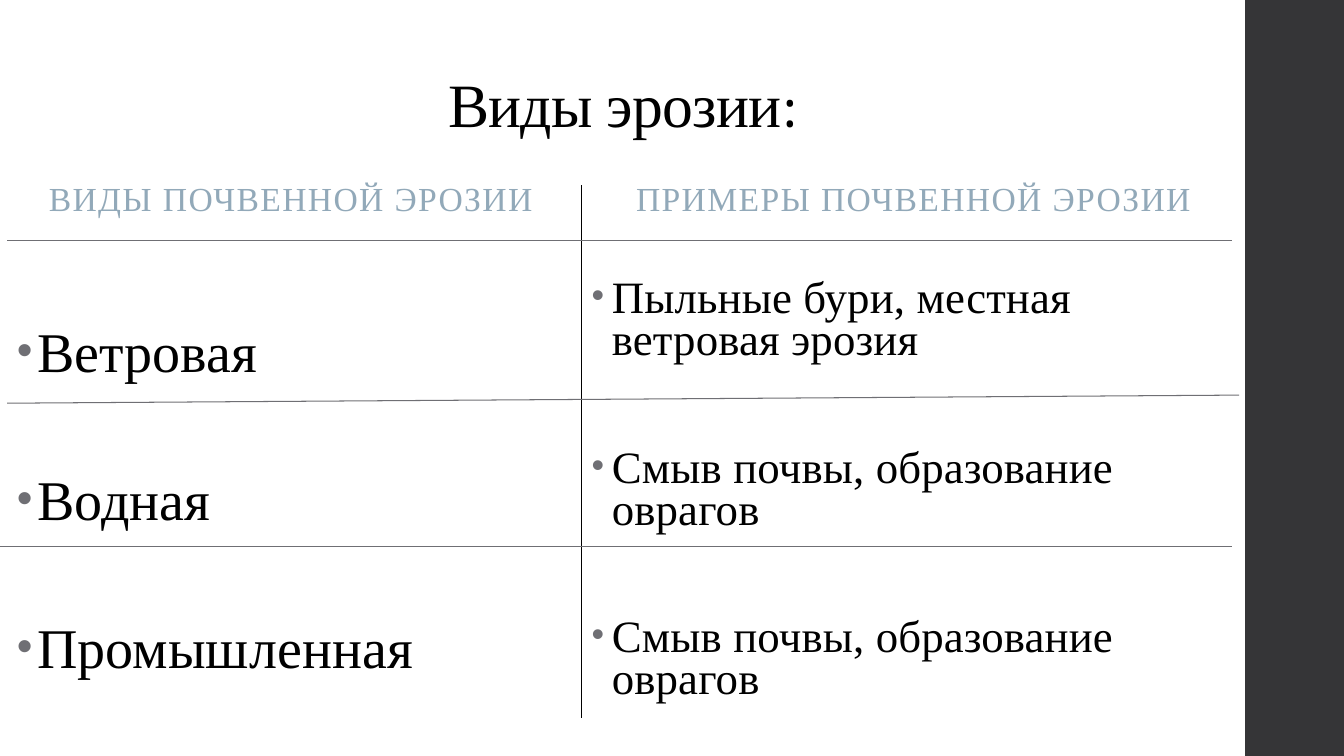
from lxml import etree
from pptx import Presentation
from pptx.dml.color import RGBColor
from pptx.enum.shapes import MSO_CONNECTOR, MSO_SHAPE
from pptx.enum.text import MSO_ANCHOR, PP_ALIGN
from pptx.oxml.ns import qn
from pptx.util import Inches, Pt

STRAIGHT = MSO_CONNECTOR.STRAIGHT
RECTANGLE = MSO_SHAPE.RECTANGLE
TOP, BOTTOM = MSO_ANCHOR.TOP, MSO_ANCHOR.BOTTOM
CENTER = PP_ALIGN.CENTER

BLACK, GRAY, BLUE, DARK = "000000", "6F6F74", "92A9B9", "353537"
SERIF, TITLE_SERIF = "Times New Roman", "Cambria"


def color(value):
    return RGBColor.from_string(value)


class ComparisonSlide:
    """Holds the current slide and the style of its elements."""

    def __init__(self, presentation):
        self.slide = presentation.slides.add_slide(presentation.slide_layouts[6])

    def band(self, left, top, width, height, fill):
        band = self.slide.shapes.add_shape(
            RECTANGLE, Inches(left), Inches(top), Inches(width), Inches(height))
        band.shadow.inherit = False
        band.fill.solid()
        band.fill.fore_color.rgb = color(fill)
        band.line.fill.background()

    def frame(self, left, top, width, height, anchor):
        box = self.slide.shapes.add_textbox(
            Inches(left), Inches(top), Inches(width), Inches(height))
        frame = box.text_frame
        frame.word_wrap = True
        frame.vertical_anchor = anchor
        return frame

    def run(self, paragraph, text, size, fill, spacing, font=SERIF):
        """Add a run; spacing between letters is in points."""
        run = paragraph.add_run()
        run.text = text
        run.font.size = Pt(size)
        run.font.name = font
        run.font.color.rgb = color(fill)
        run._r.get_or_add_rPr().set("spc", str(int(spacing * 100)))

    def heading(self, left, top, width, height, line_spacing, runs):
        paragraph = self.frame(left, top, width, height, BOTTOM).paragraphs[0]
        paragraph.alignment = CENTER
        paragraph.line_spacing = line_spacing
        for run in runs:
            self.run(paragraph, *run)

    def bullets(self, left, top, width, height, items, size, gap, inset=0.05):
        frame = self.frame(left, top, width, height, TOP)
        frame.margin_top = Inches(inset)
        for index, item in enumerate(items):
            paragraph = frame.add_paragraph() if index else frame.paragraphs[0]
            self.add_bullet(paragraph)
            paragraph.line_spacing = 0.78
            paragraph.space_before = Pt(gap if index else 0)
            paragraph.space_after = Pt(2)
            self.run(paragraph, item, size, BLACK, 0.1)

    def add_bullet(self, paragraph):
        properties = paragraph._p.get_or_add_pPr()
        properties.set("marL", str(Inches(0.2)))
        properties.set("indent", str(-Inches(0.2)))
        bullet_color = etree.SubElement(properties, qn("a:buClr"))
        etree.SubElement(bullet_color, qn("a:srgbClr"), val=GRAY)
        etree.SubElement(properties, qn("a:buSzPct"), val="80000")
        etree.SubElement(properties, qn("a:buFont"), typeface="Arial")
        etree.SubElement(properties, qn("a:buChar"), char="•")

    def rule(self, x1, y1, x2, y2, stroke):
        rule = self.slide.shapes.add_connector(
            STRAIGHT, Inches(x1), Inches(y1), Inches(x2), Inches(y2))
        rule.line.color.rgb = color(stroke)
        rule.line.width = Pt(0.75)
        etree.SubElement(rule._element.spPr, qn("a:effectLst"))


def main():
    presentation = Presentation()
    presentation.slide_width = Inches(13.33)
    presentation.slide_height = Inches(7.5)
    erosion = ComparisonSlide(presentation)
    divider = 5.77

    erosion.band(12.35, 0, 0.98, 7.5, DARK)
    erosion.heading(0, 0, 12.36, 1.45, 0.9, [
        ("Виды эрозии", 44, BLACK, -0.5),
        (":", 44, BLACK, -0.5, TITLE_SERIF),
    ])
    for left, width, heading in (
        (0, divider, "ВИДЫ ПОЧВЕННОЙ ЭРОЗИИ"),
        (divider, 6.58, "ПРИМЕРЫ ПОЧВЕННОЙ ЭРОЗИИ"),
    ):
        erosion.heading(left, 1.45, width, 0.77, 0.95, [(heading, 24, BLUE, 1)])

    kinds = ["Ветровая", "Водная", "Промышленная"]
    washout = "Смыв почвы, образование оврагов"
    examples = ["Пыльные бури, местная ветровая эрозия", washout, washout]
    erosion.bullets(0.07, 2.22, 5.7, 3.55, kinds, 40, 66.4, inset=1.06)
    erosion.bullets(divider, 2.73, 6.45, 4.39, examples, 32, 59.2)

    erosion.rule(divider, 1.84, divider, 7.12, BLACK)
    for x1, y1, x2, y2 in (
        (0.07, 2.39, 12.22, 2.39),
        (0.07, 4, 12.29, 3.92),
        (0, 5.42, 12.22, 5.42),
    ):
        erosion.rule(x1, y1, x2, y2, GRAY)

    presentation.save("out.pptx")


if __name__ == "__main__":
    main()
